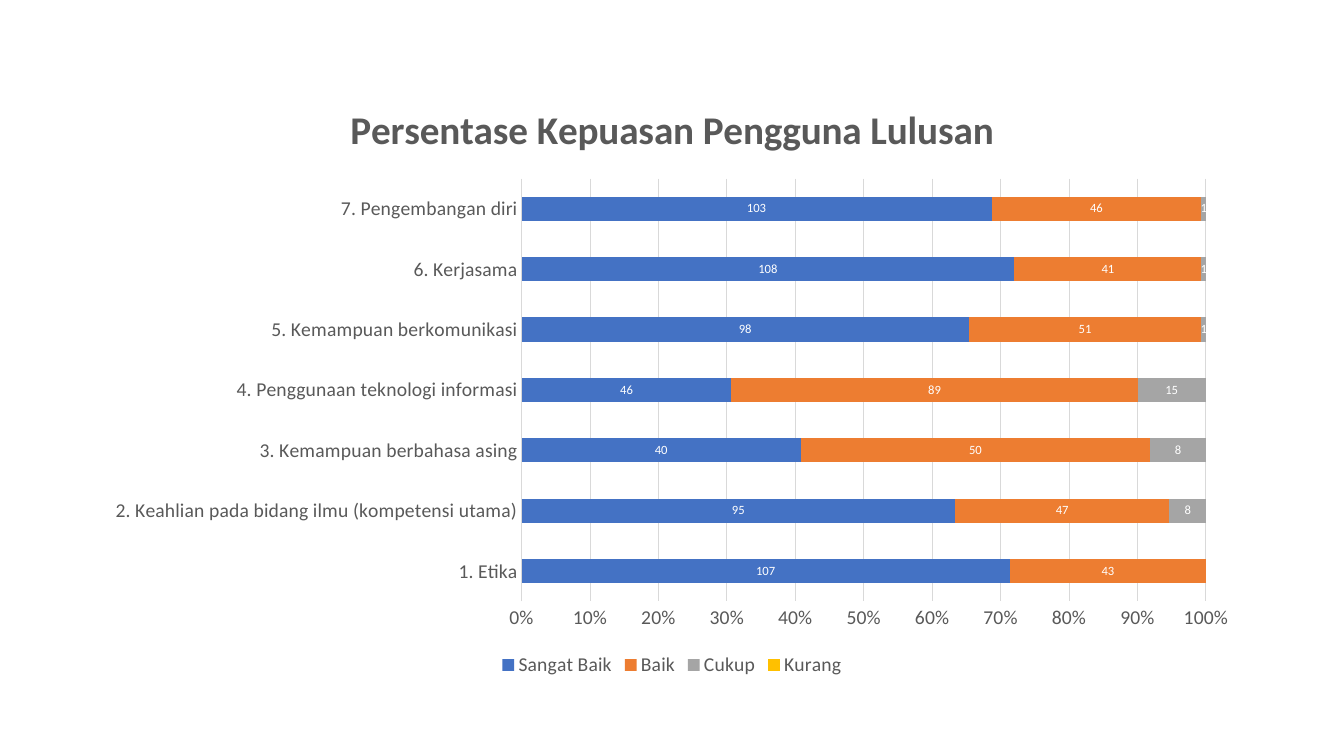
from dataclasses import dataclass

from pptx import Presentation
from pptx.chart.data import CategoryChartData
from pptx.dml.color import RGBColor
from pptx.enum.chart import (XL_CHART_TYPE, XL_LABEL_POSITION,
                             XL_LEGEND_POSITION, XL_TICK_MARK)
from pptx.util import Pt

BAR_STACKED_100 = XL_CHART_TYPE.BAR_STACKED_100
CENTER = XL_LABEL_POSITION.CENTER
BOTTOM = XL_LEGEND_POSITION.BOTTOM
NO_TICK = XL_TICK_MARK.NONE


@dataclass(frozen=True)
class Theme:
    font: str = "Calibri"
    text: str = "595959"
    rule: str = "D9D9D9"
    label: str = "FFFFFF"
    empty_label: str = "404040"
    title_size: int = 28
    axis_size: int = 14
    label_size: int = 9
    rule_width: float = 0.75


THEME = Theme()

TITLE = "Persentase Kepuasan Pengguna Lulusan"
CATEGORIES = [
    "1. Etika",
    "2. Keahlian pada bidang ilmu (kompetensi utama)",
    "3. Kemampuan berbahasa asing",
    "4. Penggunaan teknologi informasi",
    "5. Kemampuan berkomunikasi",
    "6. Kerjasama",
    "7. Pengembangan diri",
]
RATINGS = [
    ("Sangat Baik", "4472C4", THEME.label, [107, 95, 40, 46, 98, 108, 103]),
    ("Baik", "ED7D31", THEME.label, [43, 47, 50, 89, 51, 41, 46]),
    ("Cukup", "A5A5A5", THEME.label, [None, 8, 8, 15, 1, 1, 1]),
    ("Kurang", "FFC000", THEME.empty_label, [None] * len(CATEGORIES)),
]


def set_font(font, size, color, bold=False):
    font.name = THEME.font
    font.size = Pt(size)
    font.bold = bold
    font.color.rgb = RGBColor.from_string(color)


def set_rule(line):
    line.color.rgb = RGBColor.from_string(THEME.rule)
    line.width = Pt(THEME.rule_width)


def style_title(chart):
    chart.has_title = True
    tf = chart.chart_title.text_frame
    tf.text = TITLE
    set_font(tf.paragraphs[0].font, THEME.title_size, THEME.text, bold=True)
    chart.chart_title.include_in_layout = False


def style_axes(chart):
    categories, values = chart.category_axis, chart.value_axis
    for axis in (categories, values):
        axis.major_tick_mark = axis.minor_tick_mark = NO_TICK
        set_font(axis.tick_labels.font, THEME.axis_size, THEME.text)
    set_rule(categories.format.line)
    values.format.line.fill.background()
    values.has_major_gridlines = True
    set_rule(values.major_gridlines.format.line)
    values.tick_labels.number_format = "0%"
    values.tick_labels.number_format_is_linked = False


def style_legend(chart):
    chart.has_legend = True
    chart.legend.position = BOTTOM
    chart.legend.include_in_layout = False
    set_font(chart.legend.font, THEME.axis_size, THEME.text)


def style_bars(plot):
    plot.gap_width = 150
    plot.overlap = 100
    plot.vary_by_categories = False
    for series, (_, color, label_color, _) in zip(plot.series, RATINGS):
        series.format.fill.solid()
        series.format.fill.fore_color.rgb = RGBColor.from_string(color)
        labels = series.data_labels
        labels.show_value = True
        labels.position = CENTER
        set_font(labels.font, THEME.label_size, label_color)


def add_satisfaction_chart(s, left, top, width, height):
    data = CategoryChartData()
    data.categories = CATEGORIES
    for name, _, _, values in RATINGS:
        data.add_series(name, values)
    chart = s.shapes.add_chart(BAR_STACKED_100, Pt(left), Pt(top),
                               Pt(width), Pt(height), data).chart
    chart.font.name = THEME.font
    style_title(chart)
    style_axes(chart)
    style_legend(chart)
    style_bars(chart.plots[0])


def main():
    prs = Presentation()
    prs.slide_width, prs.slide_height = Pt(960), Pt(540)
    s = prs.slides.add_slide(prs.slide_layouts[6])
    add_satisfaction_chart(s, 66, 56, 828, 430.5)
    prs.save("out.pptx")


if __name__ == "__main__":
    main()
